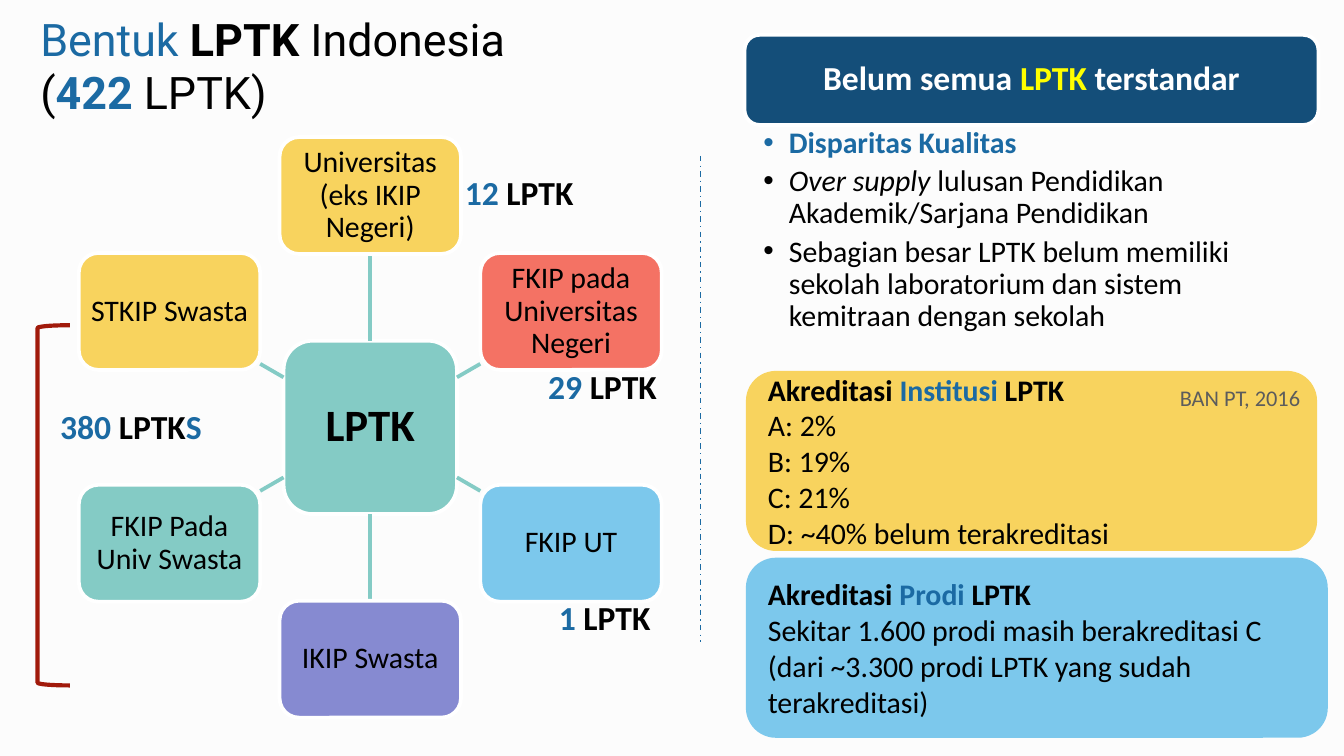
from dataclasses import dataclass
from math import cos, radians, sin
from typing import NamedTuple

from lxml import etree
from pptx import Presentation
from pptx import util as u
from pptx.dml.color import RGBColor
from pptx.enum import dml, shapes, text
from pptx.oxml import ns

# The slide is a grid of 100 columns by 56.25 rows of square cells
COLUMNS, ROWS = 100, 56.25
CELL = u.Inches(0.1)


@dataclass(frozen=True)
class Theme:
    background: str = "FCFCFC"
    white: str = "FFFFFF"
    ink: str = "000000"
    accent: str = "1B6AA3"
    navy: str = "144E79"
    highlight: str = "FFFF00"
    muted: str = "5C5C5C"
    red: str = "A11A0B"
    yellow: str = "F8D35E"
    coral: str = "F47264"
    blue: str = "7CC8EC"
    violet: str = "868AD1"
    teal: str = "84CBC5"
    title_font: str = "Roboto"
    body_font: str = "Calibri"
    title_size: float = 24
    label_size: float = 18
    body_size: float = 16
    note_size: float = 12


THEME = Theme()


class Area(NamedTuple):
    left: float
    top: float
    width: float
    height: float


class Span(NamedTuple):
    text: str
    color: str = THEME.ink
    bold: bool = False
    italic: bool = False


class Node(NamedTuple):
    text: str
    fill: str
    angle: int


class Card(NamedTuple):
    area: Area
    fill: str
    topic: str
    lines: tuple


class Label(NamedTuple):
    area: Area
    spans: list
    size: float = THEME.label_size


def cells(*values: float) -> list:
    return [round(value * CELL) for value in values]


def rgb(color: str) -> RGBColor:
    return RGBColor.from_string(color)


def write_text(frame, paragraphs: list, *, size: float = THEME.body_size,
               font: str = THEME.body_font, align=text.PP_ALIGN.LEFT,
               anchor=text.MSO_ANCHOR.MIDDLE, inset: tuple = (1, 0.5, 1, 0.5),
               wrap: bool = True, spacing: float = 1, after: float = 0) -> None:
    """Fill a frame with paragraphs, each a list of spans."""
    frame.word_wrap = wrap
    frame.auto_size = (text.MSO_AUTO_SIZE.NONE if wrap
                       else text.MSO_AUTO_SIZE.SHAPE_TO_FIT_TEXT)
    frame.vertical_anchor = anchor
    (frame.margin_left, frame.margin_top,
     frame.margin_right, frame.margin_bottom) = cells(*inset)
    for index, spans in enumerate(paragraphs):
        para = frame.add_paragraph() if index else frame.paragraphs[0]
        para.alignment, para.line_spacing = align, spacing
        para.space_before, para.space_after = u.Pt(0), u.Pt(after)
        for span in spans:
            for number, line in enumerate(span.text.split("\n")):
                if number:
                    para.add_line_break()
                run = para.add_run()
                run.text = line
                run.font.name, run.font.size = font, u.Pt(size)
                run.font.bold, run.font.italic = span.bold, span.italic
                run.font.color.rgb = rgb(span.color)


def add_bullet(para, indent: float) -> None:
    props = para._p.get_or_add_pPr()
    (width,) = cells(indent)
    props.set("marL", str(width))
    props.set("indent", str(-width))
    etree.SubElement(props, ns.qn("a:buFont")).set("typeface", "Arial")
    etree.SubElement(props, ns.qn("a:buChar")).set("char", "•")


def add_box(page, area: Area, fill: str, outline: str | None = None):
    box = page.shapes.add_shape(shapes.MSO_SHAPE.ROUNDED_RECTANGLE, *cells(*area))
    box.shadow.inherit = False
    box.fill.solid()
    box.fill.fore_color.rgb = rgb(fill)
    if outline:
        box.line.color.rgb, box.line.width = rgb(outline), u.Pt(2)
    else:
        box.line.fill.background()
    return box


def add_line(page, start: tuple, end: tuple, color: str, width: float):
    line = page.shapes.add_connector(shapes.MSO_CONNECTOR.STRAIGHT, *cells(*start, *end))
    line.line.color.rgb, line.line.width = rgb(color), u.Pt(width)
    etree.SubElement(line._element.spPr, ns.qn("a:effectLst"))
    return line


def add_wheel(page, nodes: list) -> None:
    """Place the nodes evenly round a square hub, joined by spokes."""
    center_x, center_y, radius = 27.55, 31.8, 17.25
    hub, width, height = 12.9, 13.5, 8.7
    centered = dict(align=text.PP_ALIGN.CENTER, spacing=0.9)

    box = add_box(page, Area(center_x - hub / 2, center_y - hub / 2, hub, hub),
                  THEME.teal, THEME.white)
    write_text(box.text_frame, [[Span("LPTK", bold=True)]], size=THEME.title_size,
               inset=(0.7,) * 4, **centered)
    for node in nodes:
        across, down = cos(radians(node.angle)), sin(radians(node.angle))

        def point(distance: float) -> tuple:
            return center_x + distance * across, center_y + distance * down

        # A spoke runs from the hub's edge to the node's edge
        inner = hub / 2 / max(abs(across), abs(down))
        outer = radius - min(width / 2 / max(abs(across), 0.01),
                             height / 2 / max(abs(down), 0.01))
        add_line(page, point(inner), point(outer), THEME.teal, 2)
        x, y = point(radius)
        box = add_box(page, Area(x - width / 2, y - height / 2, width, height),
                      node.fill, THEME.white)
        write_text(box.text_frame, [[Span(node.text)]], inset=(0.4,) * 4, **centered)


def add_card(page, card: Card) -> None:
    heading = [Span("Akreditasi ", bold=True), Span(card.topic, THEME.accent, True),
               Span(" LPTK", bold=True)]
    box = add_box(page, card.area, card.fill)
    write_text(box.text_frame, [heading, *([Span(line)] for line in card.lines)])


def add_label(page, label: Label) -> None:
    box = page.shapes.add_textbox(*cells(*label.area))
    write_text(box.text_frame, [label.spans], size=label.size, wrap=False,
               anchor=text.MSO_ANCHOR.TOP)


def count(number: str, *extra: Span) -> list:
    return [Span(number, THEME.accent, True), Span(" LPTK", bold=True), *extra]


NODES = [
    Node("Universitas (eks IKIP Negeri)", THEME.yellow, -90),
    Node("FKIP pada Universitas Negeri", THEME.coral, -30),
    Node("FKIP UT", THEME.blue, 30),
    Node("IKIP Swasta", THEME.violet, 90),
    Node("FKIP Pada Univ Swasta", THEME.teal, 150),
    Node("STKIP Swasta", THEME.yellow, 210),
]
CARDS = [
    Card(Area(55.5, 27.6, 42.5, 13.4), THEME.yellow, "Institusi",
         ("A: 2%", "B: 19%", "C: 21%", "D: ~40% belum terakreditasi")),
    Card(Area(55.5, 41.5, 43.3, 13.4), THEME.blue, "Prodi",
         ("Sekitar 1.600 prodi masih berakreditasi C",
          "(dari ~3.300 prodi LPTK yang sudah terakreditasi)")),
]
LABELS = [
    Label(Area(86.8, 28.1, 11.3, 3), [Span("BAN PT, 2016", THEME.muted)], THEME.note_size),
    Label(Area(33.6, 12.3, 10.2, 4), count("12")),
    Label(Area(39.8, 26.7, 10.2, 4), count("29")),
    Label(Area(40.6, 43.9, 8.9, 4), count("1")),
    Label(Area(3.5, 29.7, 12.7, 4), count("380", Span("S", THEME.accent, True))),
]
ISSUES = [
    [Span("Disparitas Kualitas", THEME.accent, True)],
    [Span("Over supply ", italic=True), Span("lulusan Pendidikan Akademik/Sarjana Pendidikan")],
    [Span("Sebagian besar LPTK belum memiliki sekolah laboratorium dan sistem "
          "kemitraan dengan sekolah")],
]


def main() -> None:
    deck = Presentation()
    deck.slide_width, deck.slide_height = cells(COLUMNS, ROWS)
    page = deck.slides.add_slide(deck.slide_layouts[5])
    page.background.fill.solid()
    page.background.fill.fore_color.rgb = rgb(THEME.background)

    # Title
    title = page.shapes.title
    title.left, title.top, title.width, title.height = cells(2, 2.1, 52.8, 5.5)
    write_text(title.text_frame, [[
        Span("Bentuk ", THEME.accent), Span("LPTK", bold=True), Span(" Indonesia\n("),
        Span("422 ", THEME.accent, True), Span("LPTK)")]],
        size=THEME.title_size, font=THEME.title_font)

    # Forms of institution, and the divider
    add_wheel(page, NODES)
    add_line(page, (52.1, 11.6), (52.1, 47.8), THEME.accent,
             0.75).line.dash_style = dml.MSO_LINE.DASH_DOT

    # Issues
    header = add_box(page, Area(55.4, 2.6, 42.7, 6.7), THEME.navy, THEME.white)
    write_text(header.text_frame, [[
        Span("Belum semua ", THEME.white, True), Span("LPTK ", THEME.highlight, True),
        Span("terstandar", THEME.white, True)]],
        size=THEME.label_size, align=text.PP_ALIGN.CENTER, inset=(0.7,) * 4, spacing=0.9)
    issues = page.shapes.add_textbox(*cells(55.4, 9.3, 42.7, 16.2))
    write_text(issues.text_frame, ISSUES, anchor=text.MSO_ANCHOR.TOP,
               inset=(1.4, 0.2, 1.2, 0.2), spacing=0.9, after=3.2)
    for para in issues.text_frame.paragraphs:
        add_bullet(para, 1.9)

    # Accreditation cards, bracket and counts
    for card in CARDS:
        add_card(page, card)
    bracket = page.shapes.add_shape(shapes.MSO_SHAPE.LEFT_BRACKET, *cells(2.8, 24.2, 2.4, 26.8))
    bracket.shadow.inherit = False
    bracket.fill.background()
    bracket.line.color.rgb, bracket.line.width = rgb(THEME.red), u.Pt(2.25)
    for label in LABELS:
        add_label(page, label)

    deck.save("out.pptx")


if __name__ == "__main__":
    main()
